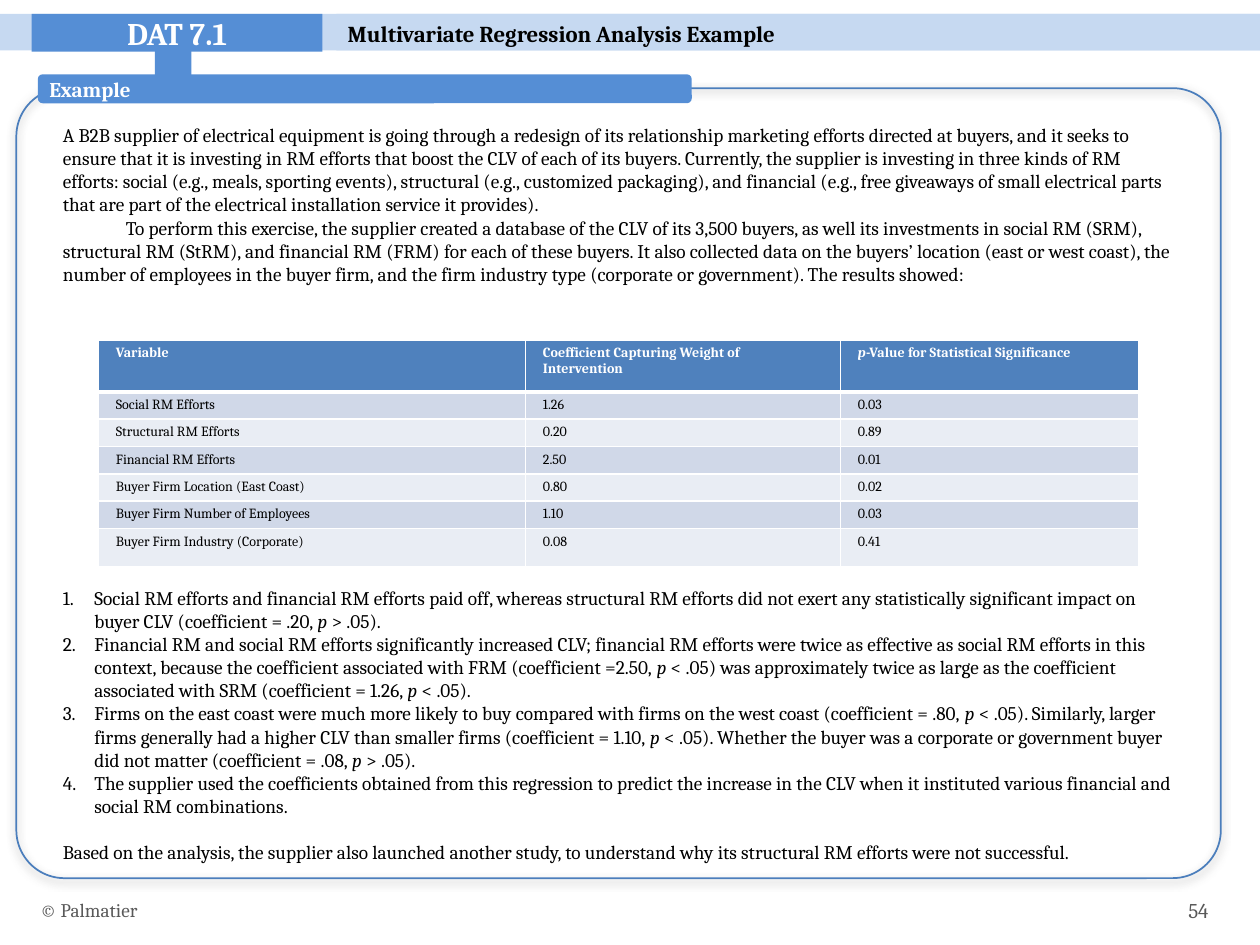
from lxml.etree import SubElement
from pptx import Presentation
from pptx.dml.color import RGBColor
from pptx.enum.shapes import MSO_SHAPE
from pptx.enum.text import MSO_ANCHOR, PP_ALIGN
from pptx.oxml.ns import qn
from pptx.util import Inches, Pt

BLACK = RGBColor(0x00, 0x00, 0x00)
WHITE = RGBColor(0xFF, 0xFF, 0xFF)
GRAY = RGBColor(0x59, 0x59, 0x59)
SHADE = RGBColor(0x80, 0x80, 0x80)
PALE = RGBColor(0xC6, 0xD9, 0xF1)
BLUE = RGBColor(0x55, 0x8E, 0xD5)
EDGE = RGBColor(0x4B, 0x7E, 0xBC)
HEAD = RGBColor(0x4F, 0x81, 0xBD)
BANDS = RGBColor(0xD0, 0xD8, 0xE8), RGBColor(0xE9, 0xED, 0xF4)
COLS, ROWS = 100, 75
LINE = 13.23  # height of one body line in points

INTRO = [
    "A B2B supplier of electrical equipment is going through a redesign of its relationship marketing efforts directed at buyers, and it seeks to ensure that it is investing in RM efforts that boost the CLV of each of its buyers. Currently, the supplier is investing in three kinds of RM efforts: social (e.g., meals, sporting events), structural (e.g., customized packaging), and financial (e.g., free giveaways of small electrical parts that are part of the electrical installation service it provides).",
    "To perform this exercise, the supplier created a database of the CLV of its 3,500 buyers, as well its investments in social RM (SRM), structural RM (StRM), and financial RM (FRM) for each of these buyers. It also collected data on the buyers’ location (east or west coast), the number of employees in the buyer firm, and the firm industry type (corporate or government). The results showed:",
]
POINTS = [
    "Social RM efforts and financial RM efforts paid off, whereas structural RM efforts did not exert any statistically significant impact on buyer CLV (coefficient = .20, *p* > .05).",
    "Financial RM and social RM efforts significantly increased CLV; financial RM efforts were twice as effective as social RM efforts in this context, because the coefficient associated with FRM (coefficient =2.50, *p* < .05) was approximately twice as large as the coefficient associated with SRM (coefficient = 1.26, *p* < .05).",
    "Firms on the east coast were much more likely to buy compared with firms on the west coast (coefficient = .80, *p* < .05). Similarly, larger firms generally had a higher CLV than smaller firms (coefficient = 1.10, *p* < .05). Whether the buyer was a corporate or government buyer did not matter (coefficient = .08, *p* > .05).",
    "The supplier used the coefficients obtained from this regression to predict the increase in the CLV when it instituted various financial and social RM combinations.",
]
CLOSE = "Based on the analysis, the supplier also launched another study, to understand why its structural RM efforts were not successful."
DATA = [
    ("Variable", "Coefficient Capturing Weight of Intervention",
     "*p*-Value for Statistical Significance"),
    ("Social RM Efforts", "1.26", "0.03"),
    ("Structural RM Efforts", "0.20", "0.89"),
    ("Financial RM Efforts", "2.50", "0.01"),
    ("Buyer Firm Location (East Coast)", "0.80", "0.02"),
    ("Buyer Firm Number of Employees", "1.10", "0.03"),
    ("Buyer Firm Industry (Corporate)", "0.08", "0.41"),
]


class Deck:
    def __init__(self):
        self.prs = Presentation()
        self.prs.slide_width, self.prs.slide_height = Inches(10), Inches(7.5)
        self.font = "Cambria"
        self.slide = self.prs.slides.add_slide(self.prs.slide_layouts[6])

    def across(self, n):
        return round(self.prs.slide_width * n / COLS)

    def down(self, n):
        return round(self.prs.slide_height * n / ROWS)

    def place(self, x, y, w, h):
        return self.across(x), self.down(y), self.across(w), self.down(h)

    def typeset(self, para, text, size, color=BLACK, bold=False, align=PP_ALIGN.LEFT):
        """Fill a paragraph; parts between asterisks are italic."""
        para.alignment = align
        for i, part in enumerate(text.split("*")):
            if not part:
                continue
            run = para.add_run()
            run.text = part
            style = {"name": self.font, "size": Pt(size), "bold": bold, "italic": i % 2 == 1}
            for key, value in style.items():
                setattr(run.font, key, value)
            run.font.color.rgb = color

    def frame(self, frame, side, edge, anchor):
        style = {"word_wrap": True, "vertical_anchor": anchor,
                 "margin_left": Inches(side), "margin_right": Inches(side),
                 "margin_top": Inches(edge), "margin_bottom": Inches(edge)}
        for key, value in style.items():
            setattr(frame, key, value)
        return frame

    def block(self, box, fill=None, text="", kind=MSO_SHAPE.RECTANGLE,
              anchor=MSO_ANCHOR.MIDDLE, inset=(0.08, 0.04), **style):
        shape = self.slide.shapes.add_shape(kind, *self.place(*box))
        shape.shadow.inherit = False
        shape.line.fill.background()
        if fill is None:
            shape.fill.background()
        else:
            shape.fill.solid()
            shape.fill.fore_color.rgb = fill
        if text:
            frame = self.frame(shape.text_frame, *inset, anchor)
            self.typeset(frame.paragraphs[0], text, **style)
        return shape

    def panel(self, box):
        """Rounded outline with a soft shadow below."""
        shape = self.block(box, kind=MSO_SHAPE.ROUNDED_RECTANGLE)
        shape.adjustments[0] = 0.061
        shape.line.color.rgb, shape.line.width = EDGE, Pt(1)
        glow = SubElement(shape.element.spPr.find(qn("a:effectLst")), qn("a:outerShdw"),
                          blurRad=str(Pt(5)), dist=str(Pt(2)), dir="5400000", rotWithShape="0")
        tint = SubElement(glow, qn("a:srgbClr"), val=str(SHADE))
        SubElement(tint, qn("a:alpha"), val="75000")

    def label(self, box, text, anchor=MSO_ANCHOR.MIDDLE, **style):
        shape = self.slide.shapes.add_textbox(*self.place(*box))
        frame = self.frame(shape.text_frame, 0.1, 0.05, anchor)
        self.typeset(frame.paragraphs[0], text, **style)
        return frame

    def story(self, box):
        """Intro, numbered points below the room for the table, and closing line."""
        frame = self.label(box, INTRO[0], MSO_ANCHOR.TOP, size=11)
        para = frame.add_paragraph()
        para._p.get_or_add_pPr().set("indent", str(Inches(0.5)))
        self.typeset(para, INTRO[1], 11)
        for i, text in enumerate(POINTS):
            para = frame.add_paragraph()
            props = para._p.get_or_add_pPr()
            props.set("marL", str(Inches(0.25)))
            props.set("indent", str(Inches(-0.25)))
            SubElement(props, qn("a:buFont"), typeface="+mj-lt")
            SubElement(props, qn("a:buAutoNum"), type="arabicPeriod")
            if i == 0:
                para.space_before = Pt(13 * LINE)
            self.typeset(para, text, 11)
        para = frame.add_paragraph()
        para.space_before = Pt(LINE)
        self.typeset(para, CLOSE, 11)

    def border(self, cell, row):
        thick = {"a:lnT": 3 if row == 1 else 1, "a:lnB": 3 if row == 0 else 1}
        for tag in ("a:lnL", "a:lnR", "a:lnT", "a:lnB"):
            line = SubElement(cell._tc.get_or_add_tcPr(), qn(tag), w=str(Pt(thick.get(tag, 1))))
            SubElement(SubElement(line, qn("a:solidFill")), qn("a:srgbClr"), val=str(WHITE))

    def table(self, box, data, widths, heights):
        grid = self.slide.shapes.add_table(len(data), len(widths), *self.place(*box)).table
        for col, width in zip(grid.columns, widths):
            col.width = self.across(width)
        for row, height in zip(grid.rows, heights):
            row.height = self.down(height)
        for r, texts in enumerate(data):
            for c, text in enumerate(texts):
                cell = grid.cell(r, c)
                cell.margin_left = cell.margin_right = Inches(0.14)
                cell.margin_top = cell.margin_bottom = Inches(0.04)
                self.border(cell, r)
                cell.fill.solid()
                cell.fill.fore_color.rgb = BANDS[(r - 1) % 2] if r else HEAD
                self.typeset(cell.text_frame.paragraphs[0], text, 8,
                             BLACK if r else WHITE, r == 0)


def main():
    deck = Deck()
    deck.story((4, 9.3, 90.2, 60.2))
    deck.block((0, 1.1, 100, 2.9), PALE)
    deck.block((26.7, 1.1, 73.3, 2.9), PALE, "Multivariate Regression Analysis Example",
               anchor=MSO_ANCHOR.TOP, inset=(0.09, 0.05), size=13, bold=True)
    deck.block((2.5, 1.1, 23.1, 3), BLUE, "DAT 7.1", size=18, color=WHITE,
               bold=True, align=PP_ALIGN.CENTER)
    deck.panel((1.3, 7, 95.6, 62.7))
    deck.block((3, 5.9, 51.9, 2.3), BLUE, "Example", MSO_SHAPE.ROUNDED_RECTANGLE,
               size=12, color=WHITE, bold=True)
    deck.table((7.8, 27, 82.6, 18), DATA, (33.9, 25, 23.7), [4.1] + [2.17] * 5 + [3.05])
    deck.label((2.2, 70.2, 67, 4), "© Palmatier", size=11, color=GRAY)
    deck.label((90.8, 70.2, 6.1, 4), "54", size=12, color=GRAY, align=PP_ALIGN.RIGHT)
    deck.block((12.3, 3.9, 2.9, 3.7), BLUE)
    deck.prs.save("out.pptx")


if __name__ == "__main__":
    main()
